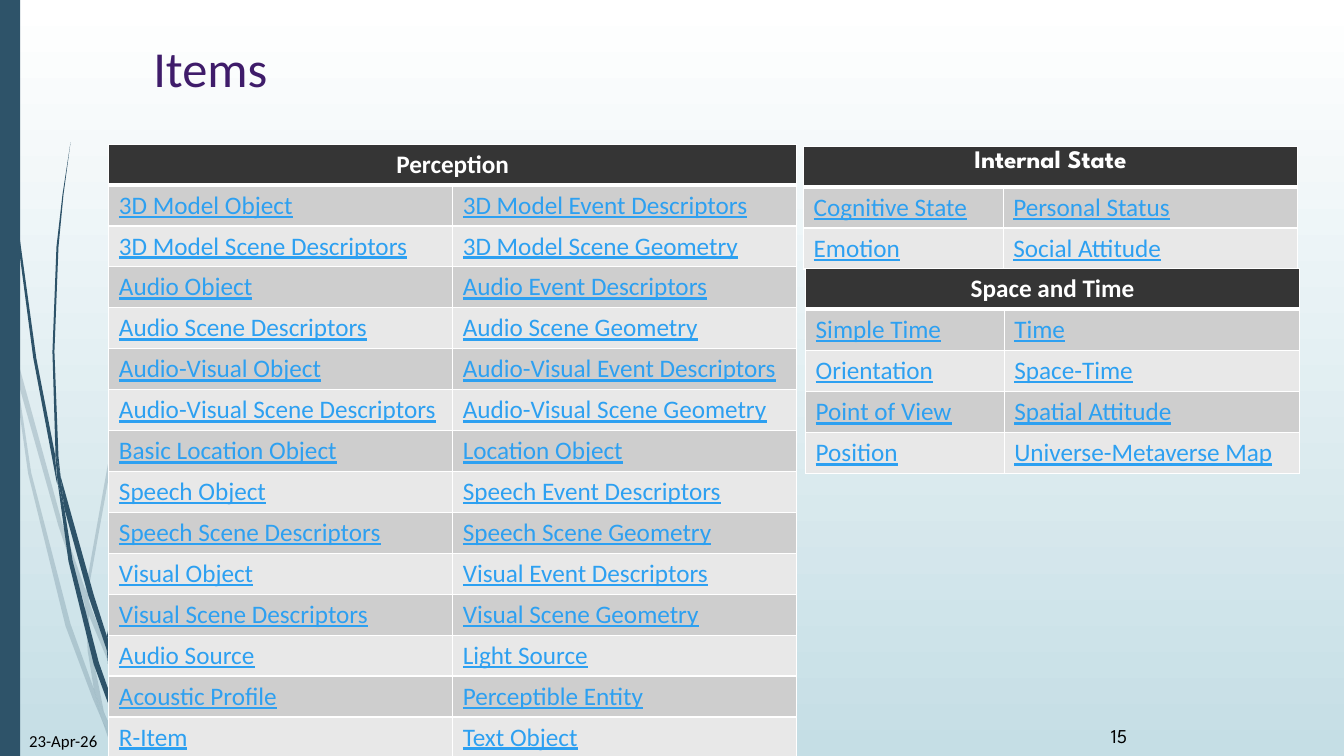
from lxml.etree import SubElement as Sub
from pptx import Presentation
from pptx.dml.color import RGBColor as RGB
from pptx.enum.shapes import MSO_SHAPE as SHAPE
from pptx.enum.text import MSO_ANCHOR as ANCHOR, PP_ALIGN as ALIGN
from pptx.oxml.ns import qn
from pptx.util import Emu, Pt

SCALE = 9144  # 100 px to the inch
COLORS = {
    "top": "FFFFFF", "base": "C5DEE5", "stem": "2E5369", "title": "3F1C6A",
    "head": "353535", "odd": "CECECE", "even": "E8E8E8",
    "link": "2DA0F1", "white": "FFFFFF", "black": "000000",
}
BODY = "Calibri"
SPARTAN = "League Spartan"

PERCEPTION = [
    ("3D Model Object", "3D Model Event Descriptors"),
    ("3D Model Scene Descriptors", "3D Model Scene Geometry"),
    ("Audio Object", "Audio Event Descriptors"),
    ("Audio Scene Descriptors", "Audio Scene Geometry"),
    ("Audio-Visual Object", "Audio-Visual Event Descriptors"),
    ("Audio-Visual Scene Descriptors", "Audio-Visual Scene Geometry"),
    ("Basic Location Object", "Location Object"),
    ("Speech Object", "Speech Event Descriptors"),
    ("Speech Scene Descriptors", "Speech Scene Geometry"),
    ("Visual Object", "Visual Event Descriptors"),
    ("Visual Scene Descriptors", "Visual Scene Geometry"),
    ("Audio Source", "Light Source"),
    ("Acoustic Profile", "Perceptible Entity"),
    ("R-Item", "Text Object"),
]
STATE = [
    ("Cognitive State", "Personal Status"),
    ("Emotion", "Social Attitude"),
]
SPACE = [
    ("Simple Time", "Time"),
    ("Orientation", "Space-Time"),
    ("Point of View", "Spatial Attitude"),
    ("Position", "Universe-Metaverse Map"),
]

# Corner points of each blade of grass
PALE = [
    [(11, 350), (9, 322), (0, 282), (0, 299), (10, 344)],
    [(58, 522), (84, 599), (85, 586), (62, 520), (14, 345), (17, 376)],
    [(92, 607), (88, 596), (88, 610), (123, 694), (150, 751), (155, 751),
     (127, 692)],
    [(119, 751), (124, 751), (105, 711)],
    [(93, 683), (70, 619), (31, 469), (17, 376), (11, 350), (28, 470),
     (65, 621), (92, 693), (101, 714), (99, 707)],
    [(84, 599), (87, 646), (93, 683), (96, 692), (105, 711), (103, 706),
     (91, 646), (88, 610), (88, 608)],
    [(88, 584), (110, 462), (160, 349), (229, 245), (268, 198), (290, 175),
     (312, 154), (312, 153), (289, 175), (268, 197), (228, 244), (158, 348),
     (107, 461), (85, 584), (85, 586), (88, 596)],
    [(101, 714), (114, 751), (119, 751)],
    [(88, 608), (88, 610), (88, 596), (85, 586), (84, 599)],
    [(96, 692), (93, 683), (99, 707), (101, 714), (119, 751), (105, 711)],
]
DARK = [
    [(7, 110), (17, 233), (33, 355), (56, 477), (57, 481), (55, 457),
     (55, 453), (36, 355), (19, 232), (8, 109), (5, 48), (4, 0), (3, 0),
     (4, 48)],
    [(88, 592), (106, 645), (106, 633), (106, 631), (93, 590), (60, 472),
     (64, 505)],
    [(113, 649), (110, 641), (111, 656), (132, 708), (152, 749), (157, 749),
     (136, 706)],
    [(110, 691), (98, 657), (72, 556), (64, 505), (57, 477), (68, 557),
     (93, 659), (111, 708), (117, 722), (116, 717)],
    [(60, 472), (58, 453), (54, 349), (58, 245), (63, 193), (70, 141),
     (62, 193), (56, 245), (52, 349), (55, 449)],
    [(133, 749), (136, 749), (122, 719)],
    [(57, 477), (64, 505), (60, 472), (55, 449), (55, 453)],
    [(111, 633), (125, 552), (158, 476), (205, 406), (231, 374), (245, 359),
     (261, 344), (260, 344), (245, 358), (231, 373), (204, 405), (156, 474),
     (122, 551), (106, 631), (110, 641)],
    [(117, 722), (127, 749), (131, 749)],
    [(106, 645), (110, 691), (116, 706), (122, 719), (121, 716), (111, 656),
     (109, 651)],
    [(106, 645), (109, 651), (111, 656), (110, 641), (106, 631), (106, 633)],
    [(116, 706), (110, 691), (116, 717), (117, 722), (130, 749), (133, 749),
     (122, 719)],
]


def px(n):
    return Emu(round(n * SCALE))


def rgb(name):
    return RGB.from_string(COLORS[name])


def paint(shape, color):
    shape.shadow.inherit = False
    shape.fill.solid()
    shape.fill.fore_color.rgb = rgb(color)
    shape.line.fill.background()


def add_grass(slide, blades, alpha=100):
    tuft = slide.shapes.add_group_shape()
    for blade in blades:
        edge = [(px(x), px(y)) for x, y in blade]
        form = tuft.shapes.build_freeform(*edge[0])
        form.add_line_segments(edge[1:], close=True)
        shape = form.convert_to_shape()
        paint(shape, "stem")
        if alpha < 100:
            tint = next(shape.fill._xPr.iter(qn("a:srgbClr")))
            Sub(tint, qn("a:alpha"), val=str(alpha * 1000))


def style(frame, size, color, face=BODY, bold=False, line=False):
    for run in frame.paragraphs[0].runs:
        font = run.font
        font.size, font.name = Pt(size), face
        font.bold, font.underline = bold, line
        font.color.rgb = rgb(color)


def add_note(slide, text, box, size, face=BODY):
    frame = slide.shapes.add_textbox(*map(px, box)).text_frame
    frame.word_wrap = True
    frame.text = text
    style(frame, size, "black", face)


def add_edges(cell, top, base):
    """Draw white cell borders; top and base are widths in points."""
    props = cell._tc.get_or_add_tcPr()
    for side, width in (("L", 1), ("R", 1), ("T", top), ("B", base)):
        line = Sub(props, qn(f"a:ln{side}"), w=str(Pt(width)))
        fill = Sub(line, qn("a:solidFill"))
        Sub(fill, qn("a:srgbClr"), val=COLORS["white"])


def fill_cell(cell, text, row, face):
    add_edges(cell, 3 if row == 1 else 1, 1 if row else 3)
    cell.fill.solid()
    shade = ("odd" if row % 2 else "even") if row else "head"
    cell.fill.fore_color.rgb = rgb(shade)
    if not text:
        return
    frame = cell.text_frame
    frame.text = text
    if row:
        cell.vertical_anchor = ANCHOR.MIDDLE
        style(frame, 18, "link", line=True)
    else:
        frame.paragraphs[0].alignment = ALIGN.CENTER
        style(frame, 18, "white", face, bold=True)


def add_grid(slide, head, pairs, spot, widths, high, face=BODY):
    rows = [(head, ""), *pairs]
    box = (*spot, sum(widths), high)
    grid = slide.shapes.add_table(len(rows), 2, *map(px, box)).table
    for col, wide in zip(grid.columns, widths):
        col.width = px(wide)
    grid.cell(0, 0).merge(grid.cell(0, 1))
    for i, pair in enumerate(rows):
        grid.rows[i].height = px(high / len(rows))
        for j, text in enumerate(pair):
            fill_cell(grid.cell(i, j), text, i, face)


def add_back(slide):
    fill = slide.background.fill
    fill.gradient()
    fill.gradient_angle = 270
    for stop, name, spot in zip(fill.gradient_stops, ("top", "base"), (0, 1)):
        stop.color.rgb = rgb(name)
        stop.position = spot
    add_grass(slide, PALE, alpha=20)
    add_grass(slide, DARK)
    bar = slide.shapes.add_shape(SHAPE.RECTANGLE, *map(px, (0, 0, 20, 750)))
    paint(bar, "stem")


def set_title(slide, text, box):
    title = slide.shapes.title
    title.left, title.top, title.width, title.height = map(px, box)
    frame = title.text_frame
    frame.text = text
    frame.vertical_anchor = ANCHOR.TOP
    frame.paragraphs[0].alignment = ALIGN.LEFT
    style(frame, 36, "title")


def main():
    deck = Presentation()
    deck.slide_width, deck.slide_height = px(1333), px(750)
    slide = deck.slides.add_slide(deck.slide_layouts[5])
    add_back(slide)
    set_title(slide, "Items", (142, 32, 1116, 140))
    add_grid(slide, "Perception", PERCEPTION, (108, 143), (341, 341), 609)
    add_note(slide, "23-Apr-26", (19, 720, 109, 40), 12)
    add_note(slide, "15", (1092, 718, 61, 5), 14, SPARTAN)
    add_grid(slide, "Internal State", STATE, (797, 145), (198, 292), 122,
             SPARTAN)
    add_grid(slide, "Space and Time", SPACE, (799, 266), (197, 293), 204)
    deck.save("out.pptx")


if __name__ == "__main__":
    main()
